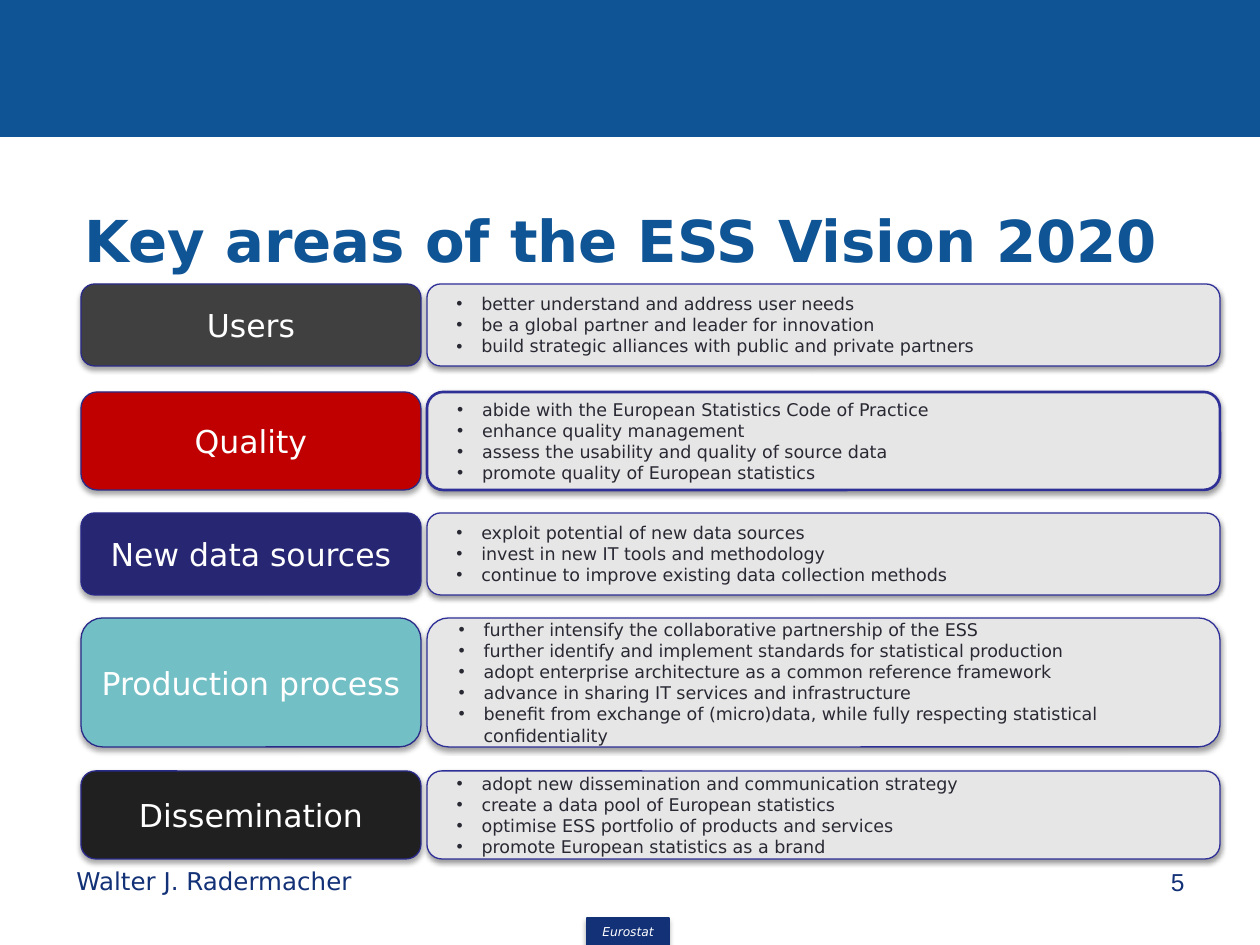
from lxml import etree
from pptx import Presentation
from pptx.dml.color import RGBColor
from pptx.enum.shapes import MSO_SHAPE
from pptx.enum.text import MSO_ANCHOR, MSO_AUTO_SIZE, PP_ALIGN
from pptx.oxml.ns import qn
from pptx.util import Emu, Pt

RECT, ROUNDED = MSO_SHAPE.RECTANGLE, MSO_SHAPE.ROUNDED_RECTANGLE
MIDDLE, TOP = MSO_ANCHOR.MIDDLE, MSO_ANCHOR.TOP
LEFT, CENTER, RIGHT = PP_ALIGN.LEFT, PP_ALIGN.CENTER, PP_ALIGN.RIGHT
PX_PER_INCH = 126
SANS, ARIAL = "DejaVu Sans", "Arial"

BLUE = RGBColor(0x0F, 0x54, 0x94)
NAVY = RGBColor(0x13, 0x31, 0x76)
WHITE = RGBColor(0xFF, 0xFF, 0xFF)
INK = RGBColor(0x29, 0x29, 0x34)
PANEL = RGBColor(0xE6, 0xE6, 0xE6)
PANEL_EDGE = RGBColor(0x2F, 0x2F, 0x98)
AREA_EDGE = RGBColor(0x2A, 0x2A, 0x89)
GRAY = RGBColor(0x40, 0x40, 0x40)
RED = RGBColor(0xC0, 0x00, 0x00)
INDIGO = RGBColor(0x26, 0x26, 0x73)
TEAL = RGBColor(0x72, 0xBF, 0xC5)
BLACK = RGBColor(0x20, 0x20, 0x20)

# Content
TITLE = "Key areas of the ESS Vision 2020"
AUTHOR, PAGE, AGENCY = "Walter J. Radermacher", "5", "Eurostat"
# Area, colour, top and height in px, panel edge in points, actions
AREAS = [
    ("Users", GRAY, 284, 82, 0.75, [
        "better understand and address user needs",
        "be a global partner and leader for innovation",
        "build strategic alliances with public and private partners"]),
    ("Quality", RED, 392, 98, 1.5, [
        "abide with the European Statistics Code of Practice",
        "enhance quality management",
        "assess the usability and quality of source data",
        "promote quality of European statistics"]),
    ("New data sources", INDIGO, 513, 82, 0.75, [
        "exploit potential of new data sources",
        "invest in new IT tools and methodology",
        "continue to improve existing data collection methods"]),
    ("Production process", TEAL, 618, 129, 0.75, [
        "further intensify the collaborative partnership of the ESS",
        "further identify and implement standards for statistical production",
        "adopt enterprise architecture as a common reference framework",
        "advance in sharing IT services and infrastructure",
        "benefit from exchange of (micro)data, while fully respecting "
        "statistical confidentiality"]),
    ("Dissemination", BLACK, 771, 88, 0.75, [
        "adopt new dissemination and communication strategy",
        "create a data pool of European statistics",
        "optimise ESS portfolio of products and services",
        "promote European statistics as a brand"]),
]
AREA_LEFT, AREA_WIDTH = 81, 340
PANEL_LEFT, PANEL_WIDTH = 427, 793
BULLET_INDENT, BULLET_HANG = 38, 25


def px(length):
    return Emu(round(length * 914400 / PX_PER_INCH))


def add_shadow(shape, opacity, distance):
    effects = etree.SubElement(shape._element.spPr, qn("a:effectLst"))
    outer = etree.SubElement(
        effects, qn("a:outerShdw"), blurRad=str(Pt(3.1)),
        dist=str(Pt(distance)), dir="5400000", rotWithShape="0")
    black = etree.SubElement(outer, qn("a:srgbClr"), val="000000")
    etree.SubElement(black, qn("a:alpha"), val=str(opacity * 1000))


def add_box(slide, preset, place, fill, edge, edge_width=0.75, shadow=None):
    box = slide.shapes.add_shape(preset, *map(px, place))
    box.fill.solid()
    box.fill.fore_color.rgb = fill
    box.line.color.rgb = edge
    box.line.width = Pt(edge_width)
    if shadow:
        add_shadow(box, *shadow)
    else:
        box.shadow.inherit = False
    return box


def add_bullet(paragraph):
    properties = paragraph._p.get_or_add_pPr()
    properties.set("marL", str(px(BULLET_INDENT)))
    properties.set("indent", str(-px(BULLET_HANG)))
    etree.SubElement(properties, qn("a:buFont"), typeface=ARIAL)
    etree.SubElement(properties, qn("a:buChar"), char="•")


def write(shape, lines, size, color, align=LEFT, anchor=MIDDLE, font=SANS,
          bold=False, italic=False, bullets=False):
    frame = shape.text_frame
    frame.text = "\n".join(lines)
    frame.word_wrap = True
    frame.auto_size = MSO_AUTO_SIZE.NONE
    frame.vertical_anchor = anchor
    for paragraph in frame.paragraphs:
        paragraph.alignment = align
        if bullets:
            add_bullet(paragraph)
        for run in paragraph.runs:
            run.font.name = font
            run.font.size = Pt(size)
            run.font.bold = bold
            run.font.italic = italic
            run.font.color.rgb = color
    return frame


def main():
    deck = Presentation()
    deck.slide_width, deck.slide_height = px(1260), px(945)
    slide = deck.slides.add_slide(deck.slide_layouts[5])

    # Header band and agency tab
    add_box(slide, RECT, (0, 0, 1260, 136), BLUE, BLUE)
    tab = add_box(slide, RECT, (587, 918, 82, 28), NAVY, NAVY,
                  shadow=(35, 1.8))
    write(tab, [AGENCY], 7, WHITE, CENTER, italic=True)

    # Title
    title = slide.shapes.title
    title.left, title.top, title.width, title.height = map(
        px, (64, 175, 1134, 129))
    title_frame = write(title, [TITLE], 33, BLUE, CENTER, bold=True)
    title_frame.margin_right = px(32)

    # Key areas with their actions
    for area, color, top, height, edge_width, actions in AREAS:
        panel = add_box(slide, ROUNDED, (PANEL_LEFT, top, PANEL_WIDTH, height),
                        PANEL, PANEL_EDGE, edge_width, (38, 1.6))
        panel_frame = write(panel, actions, 10, INK, bullets=True)
        panel_frame.margin_top = panel_frame.margin_bottom = 0
        label = add_box(slide, ROUNDED, (AREA_LEFT, top, AREA_WIDTH, height),
                        color, AREA_EDGE, shadow=(35, 1.8))
        write(label, [area], 18, WHITE, CENTER)

    # Footer
    for words, place, align, font in (
            (AUTHOR, (64, 860, 400, 66), LEFT, SANS),
            (PAGE, (903, 861, 294, 66), RIGHT, ARIAL)):
        footer = slide.shapes.add_textbox(*map(px, place))
        write(footer, [words], 14, NAVY, align, TOP, font)

    deck.save("out.pptx")


if __name__ == "__main__":
    main()
